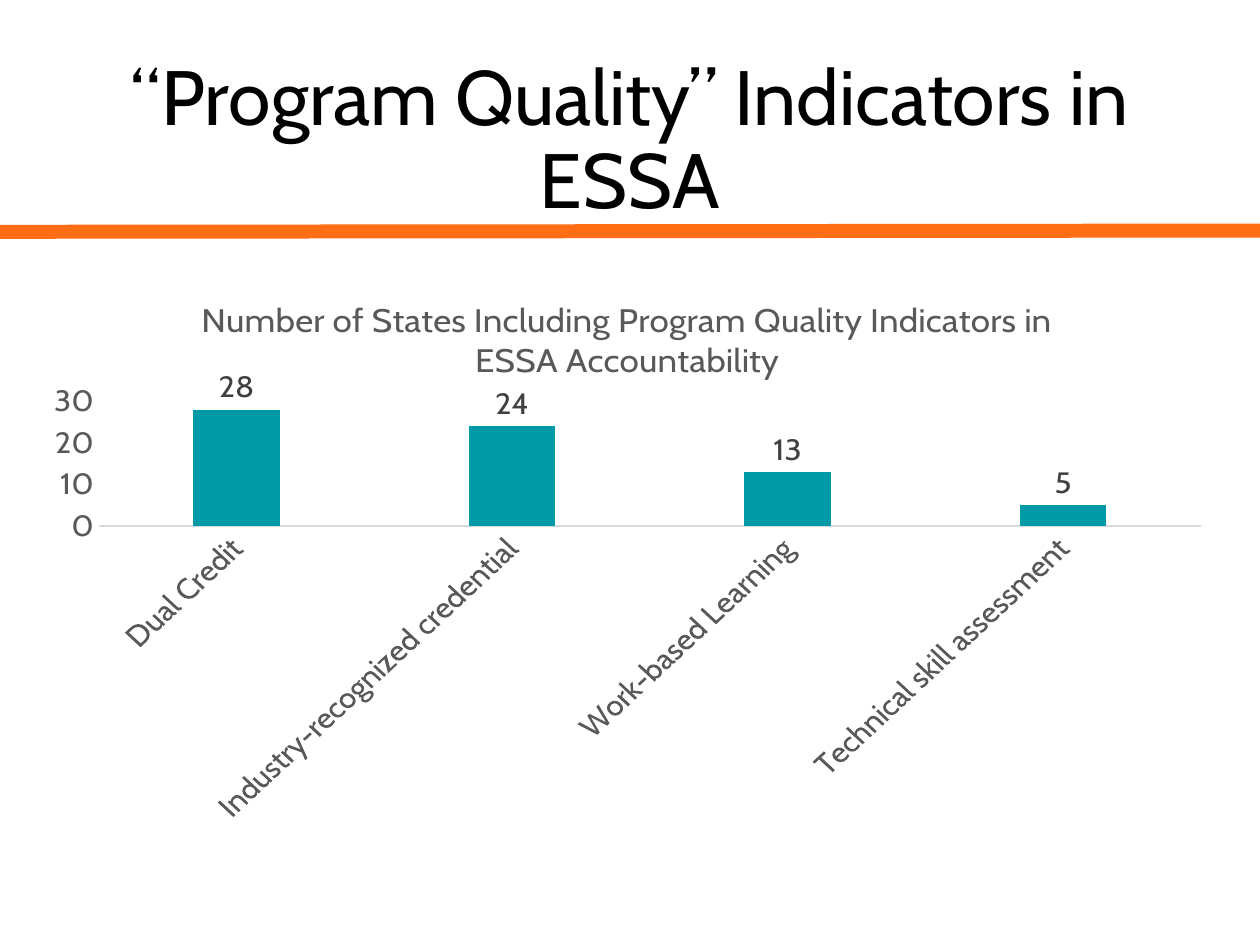
"""Build a slide charting program quality indicators in ESSA plans."""
from dataclasses import dataclass

from lxml.etree import SubElement
from pptx import Presentation
from pptx.chart.data import CategoryChartData
from pptx.dml.color import RGBColor
from pptx.enum.chart import XL_CHART_TYPE, XL_LABEL_POSITION, XL_TICK_MARK
from pptx.enum.shapes import MSO_CONNECTOR
from pptx.enum.text import MSO_ANCHOR, PP_ALIGN
from pptx.oxml.ns import qn
from pptx.util import Inches, Pt


@dataclass(frozen=True)
class Theme:
    font: str = "Cabin"
    ink: str = "000000"
    muted: str = "595959"
    label: str = "404040"
    axis: str = "D9D9D9"
    rule: str = "FF6D14"
    bar: str = "009AA6"
    heading_size: int = 44
    chart_title_size: int = 20
    chart_size: int = 18


class SlideBuilder:
    def __init__(self, slide, theme):
        self.slide = slide
        self.theme = theme

    def style(self, font, size, color):
        font.name = self.theme.font
        font.size = Pt(size)
        font.bold = False
        font.color.rgb = RGBColor.from_string(color)

    def rule(self, x1, y1, x2, y2, width):
        line = self.slide.shapes.add_connector(
            MSO_CONNECTOR.STRAIGHT, Inches(x1), Inches(y1), Inches(x2), Inches(y2))
        line.line.color.rgb = RGBColor.from_string(self.theme.rule)
        line.line.width = Pt(width)
        SubElement(line._element.spPr, qn("a:effectLst"))

    def heading(self, text, x, y, w, h):
        tf = self.slide.shapes.add_textbox(
            Inches(x), Inches(y), Inches(w), Inches(h)).text_frame
        tf.word_wrap = True
        tf.vertical_anchor = MSO_ANCHOR.MIDDLE
        p = tf.paragraphs[0]
        p.text = text
        p.alignment = PP_ALIGN.CENTER
        p.line_spacing = 0.9
        self.style(p.font, self.theme.heading_size, self.theme.ink)

    def axis(self, axis):
        axis.has_major_gridlines = False
        axis.major_tick_mark = axis.minor_tick_mark = XL_TICK_MARK.NONE
        self.style(axis.tick_labels.font, self.theme.chart_size, self.theme.muted)

    def column_chart(self, title, values, x, y, w, h):
        theme = self.theme
        data = CategoryChartData()
        data.categories = list(values)
        data.add_series("Series 1", list(values.values()))
        chart = self.slide.shapes.add_chart(
            XL_CHART_TYPE.COLUMN_CLUSTERED,
            Inches(x), Inches(y), Inches(w), Inches(h), data).chart
        self.style(chart.font, theme.chart_size, theme.ink)
        chart.has_legend = False
        chart.has_title = True
        chart.chart_title.include_in_layout = False
        p = chart.chart_title.text_frame.paragraphs[0]
        p.text = title
        self.style(p.font, theme.chart_title_size, theme.muted)

        categories, scale = chart.category_axis, chart.value_axis
        for axis in (categories, scale):
            self.axis(axis)
        categories.format.line.color.rgb = RGBColor.from_string(theme.axis)
        categories.format.line.width = Pt(0.75)
        categories.tick_labels._element.txPr.bodyPr.set("rot", "-2700000")
        scale.format.line.fill.background()
        scale.minimum_scale, scale.maximum_scale, scale.major_unit = 0, 30, 10

        plot = chart.plots[0]
        plot.gap_width, plot.overlap = 219, -27
        plot.vary_by_categories = False
        series = plot.series[0]
        series.format.fill.solid()
        series.format.fill.fore_color.rgb = RGBColor.from_string(theme.bar)
        labels = series.data_labels
        labels.show_value = True
        labels.position = XL_LABEL_POSITION.OUTSIDE_END
        self.style(labels.font, theme.chart_size, theme.label)


def main():
    prs = Presentation()
    prs.slide_width, prs.slide_height = Inches(10), Inches(7.5)
    s = SlideBuilder(prs.slides.add_slide(prs.slide_layouts[6]), Theme())
    s.rule(0, 1.84, 10, 1.83, 8)
    s.heading("“Program Quality” Indicators in ESSA", 0.69, 0.4, 8.62, 1.45)
    s.column_chart(
        "Number of States Including Program Quality Indicators in ESSA Accountability",
        {"Dual Credit": 28, "Industry-recognized credential": 24,
         "Work-based Learning": 13, "Technical skill assessment": 5},
        0.24, 2.18, 9.48, 4.36)
    prs.save("out.pptx")


if __name__ == "__main__":
    main()
